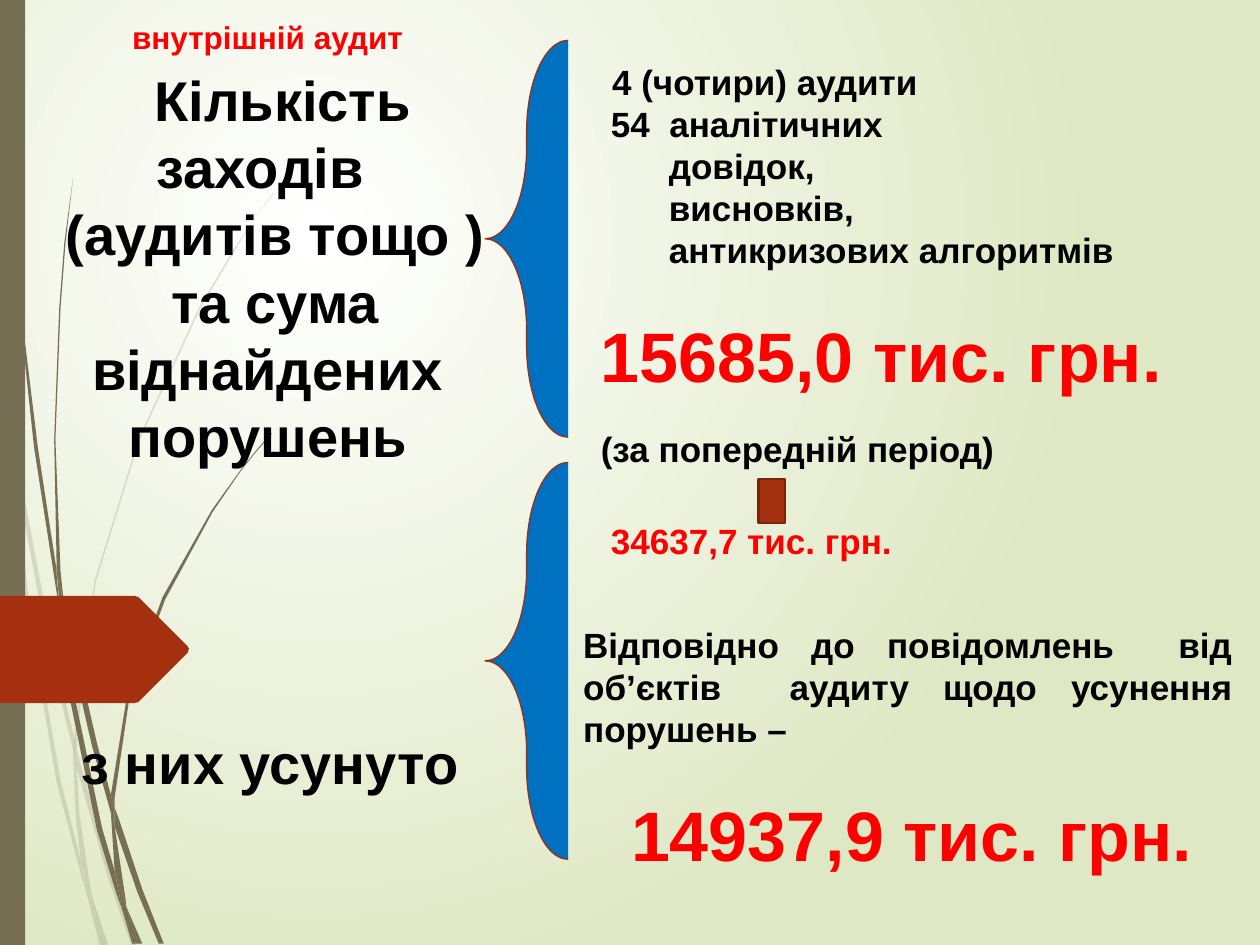
"""Build the internal audit slide: measures, sums found and sums recovered."""
from lxml import etree
from pptx import Presentation
from pptx.dml.color import RGBColor
from pptx.enum.shapes import MSO_SHAPE
from pptx.enum.text import PP_ALIGN
from pptx.oxml.ns import qn
from pptx.util import Inches, Pt

COLORS = {
    "white": "FFFFFF", "meadow": "DFE8C4", "olive": "766F54", "rust": "A53010",
    "rust_line": "9E2E0F", "rust_dark": "7A240C", "blue": "0070C0",
    "red": "FF0000", "black": "000000",
}
FONT = "Arial"
HUNDREDTH = Inches(0.01)

PALE_STEMS = [
    [(8, 350), (6, 322), (0, 282), (0, 299), (7, 344)],
    [(40, 522), (59, 599), (59, 586), (43, 520), (10, 345), (12, 376)],
    [(64, 607), (61, 596), (61, 610), (85, 694), (104, 750), (108, 750), (88, 692)],
    [(83, 750), (86, 750), (73, 711)],
    [(64, 683), (48, 619), (22, 469), (12, 376), (8, 350), (19, 470), (45, 621),
     (64, 693), (70, 714), (69, 707)],
    [(58, 599), (60, 646), (64, 683), (67, 692), (73, 711), (72, 706), (63, 646),
     (61, 610), (61, 608)],
    [(61, 584), (76, 462), (111, 349), (159, 245), (187, 198), (201, 175), (217, 154),
     (217, 153), (201, 175), (186, 197), (158, 244), (110, 348), (75, 461), (59, 584),
     (59, 586), (61, 596)],
    [(70, 714), (79, 750), (82, 750)],
    [(61, 608), (61, 610), (61, 596), (59, 586), (58, 599)],
    [(67, 692), (65, 683), (69, 707), (70, 714), (82, 750), (83, 750), (73, 711)],
]
DARK_STEMS = [
    [(5, 110), (14, 233), (27, 355), (46, 477), (47, 481), (45, 457), (45, 453),
     (30, 355), (15, 232), (6, 109), (4, 48), (3, 0), (2, 0), (3, 48)],
    [(73, 592), (88, 645), (88, 633), (88, 631), (77, 590), (50, 472), (53, 505)],
    [(94, 649), (91, 641), (91, 656), (109, 708), (126, 749), (130, 749), (113, 706)],
    [(91, 691), (81, 657), (60, 556), (53, 505), (47, 477), (56, 557), (77, 659),
     (92, 708), (97, 722), (96, 717)],
    [(50, 472), (48, 453), (44, 349), (48, 245), (52, 193), (58, 141), (51, 193),
     (47, 245), (43, 349), (45, 449), (49, 472)],
    [(110, 749), (113, 749), (100, 719)],
    [(47, 477), (53, 505), (50, 472), (49, 472), (45, 449), (45, 453)],
    [(91, 633), (103, 552), (131, 476), (169, 406), (191, 374), (203, 359), (216, 344),
     (215, 344), (203, 358), (191, 373), (168, 405), (129, 474), (101, 551), (88, 631),
     (91, 641)],
    [(97, 722), (105, 749), (108, 749)],
    [(88, 645), (91, 691), (96, 706), (100, 719), (100, 716), (91, 656), (90, 651)],
    [(88, 645), (90, 651), (91, 656), (91, 641), (88, 631), (88, 633)],
    [(96, 706), (91, 691), (96, 717), (97, 722), (108, 749), (110, 749), (100, 719)],
]
PAGE_MARKER = [(0, 473), (107, 473), (110, 474), (149, 513), (150, 515), (149, 518),
               (110, 557), (107, 558), (0, 558)]

BOLD_BODY = {"size": 20}
SUM = {"size": 40, "color": "red"}
TEXTS = [
    ((0.08, 0.47, 4.09, 3.33), PP_ALIGN.CENTER, [
        ("Кількість", {"size": 32, "left": 0.24}),
        ("заходів", {"size": 32, "right": 0.12}),
        ("(аудитів тощо )", {"size": 32, "left": 0.12}),
        ("та сума віднайдених порушень", {"size": 32, "first": 0.12}),
    ]),
    ((4.21, 0.43, 5.35, 5.05), PP_ALIGN.LEFT, [
        ("4 (чотири) аудити", {**BOLD_BODY, "left": 0.55}),
        ("54  аналітичних", {**BOLD_BODY, "left": 0.54}),
        ("довідок,", {**BOLD_BODY, "left": 1}),
        ("висновків,", {**BOLD_BODY, "left": 1}),
        ("антикризових алгоритмів", {**BOLD_BODY, "left": 1}),
        ("15685,0 тис. грн.", {**SUM, "left": 0.46, "before": 24}),
        ("(за попередній період)", {**BOLD_BODY, "left": 0.46, "before": 18}),
        ("34637,7 тис. грн.", {"size": 20, "color": "red", "left": 0.54, "before": 28}),
    ]),
    ((0.55, 5.73, 3.34, 0.67), PP_ALIGN.LEFT, [("з них усунуто", {"size": 32})]),
    ((4.53, 4.9, 5.35, 2.12), PP_ALIGN.JUSTIFY, [
        ("Відповідно до повідомлень  від об’єктів  аудиту щодо усунення порушень –",
         BOLD_BODY),
        ("14937,9 тис. грн.", {**SUM, "left": 0.38, "before": 24}),
    ]),
    ((0.95, 0.09, 2.38, 0.4), PP_ALIGN.LEFT, [
        ("внутрішній аудит", {"size": 18, "color": "red"}),
    ]),
]
BRACE_TOPS = [3.67, 0.32]


def rgb(name):
    return RGBColor.from_string(COLORS[name])


def paint(shape, fill, line=None, width=0.75):
    shape.shadow.inherit = False
    shape.fill.solid()
    shape.fill.fore_color.rgb = rgb(fill)
    if line:
        shape.line.color.rgb = rgb(line)
        shape.line.width = Pt(width)
    else:
        shape.line.fill.background()


def add_preset(shapes, kind, box, *colors):
    shape = shapes.add_shape(kind, *map(Inches, box))
    paint(shape, *colors)
    return shape


def add_outline(shapes, points, color, opacity=100):
    builder = shapes.build_freeform(*points[0], scale=HUNDREDTH)
    builder.add_line_segments(points[1:], close=True)
    outline = builder.convert_to_shape()
    paint(outline, color)
    if opacity < 100:
        tint = outline.fill._xPr.find(qn("a:solidFill"))[0]
        etree.SubElement(tint, qn("a:alpha"), val=str(opacity * 1000))


def add_text(shapes, box, align, lines):
    frame = shapes.add_textbox(*map(Inches, box)).text_frame
    frame.word_wrap = True
    frame.text = "\n".join(words for words, _ in lines)
    for paragraph, (_, style) in zip(frame.paragraphs, lines):
        paragraph.alignment = align
        paragraph.space_before = Pt(style.get("before", 0))
        properties = paragraph._p.get_or_add_pPr()
        for key, attribute in (("left", "marL"), ("right", "marR"), ("first", "indent")):
            properties.set(attribute, str(Inches(style.get(key, 0))))
        font = paragraph.runs[0].font
        font.name, font.size, font.bold = FONT, Pt(style["size"]), True
        font.color.rgb = rgb(style.get("color", "black"))


def set_background(slide):
    fill = slide.background.fill
    fill.gradient()
    for stop, position, color in zip(fill.gradient_stops, (0, 1), ("white", "meadow")):
        stop.position = position
        stop.color.rgb = rgb(color)
    gradient = slide._element.find(".//" + qn("a:gradFill"))
    gradient.remove(gradient.find(qn("a:lin")))
    circle = etree.SubElement(gradient, qn("a:path"), path="circle")
    etree.SubElement(circle, qn("a:fillToRect"), l="50000", t="50000", r="100000", b="100000")


def main():
    deck = Presentation()
    deck.slide_width, deck.slide_height = Inches(10), Inches(7.5)
    slide = deck.slides.add_slide(deck.slide_layouts[6])
    shapes = slide.shapes
    set_background(slide)
    for stems, opacity in ((PALE_STEMS, 20), (DARK_STEMS, 100)):
        plant = shapes.add_group_shape()
        for stem in stems:
            add_outline(plant.shapes, stem, "olive", opacity)
    add_preset(shapes, MSO_SHAPE.RECTANGLE, (0, 0, 0.2, 7.5), "olive")
    add_outline(shapes, PAGE_MARKER, "rust")
    for box, align, lines in TEXTS:
        add_text(shapes, box, align, lines)
    for top in BRACE_TOPS:
        brace = add_preset(shapes, MSO_SHAPE.LEFT_BRACE, (3.85, top, 0.66, 3.15),
                           "blue", "rust_line")
        brace.adjustments[0], brace.adjustments[1] = 1.1, 0.5
    add_preset(shapes, MSO_SHAPE.RECTANGLE, (6.02, 3.8, 0.21, 0.35),
               "rust", "rust_dark", 1.25)
    deck.save("out.pptx")


if __name__ == "__main__":
    main()
